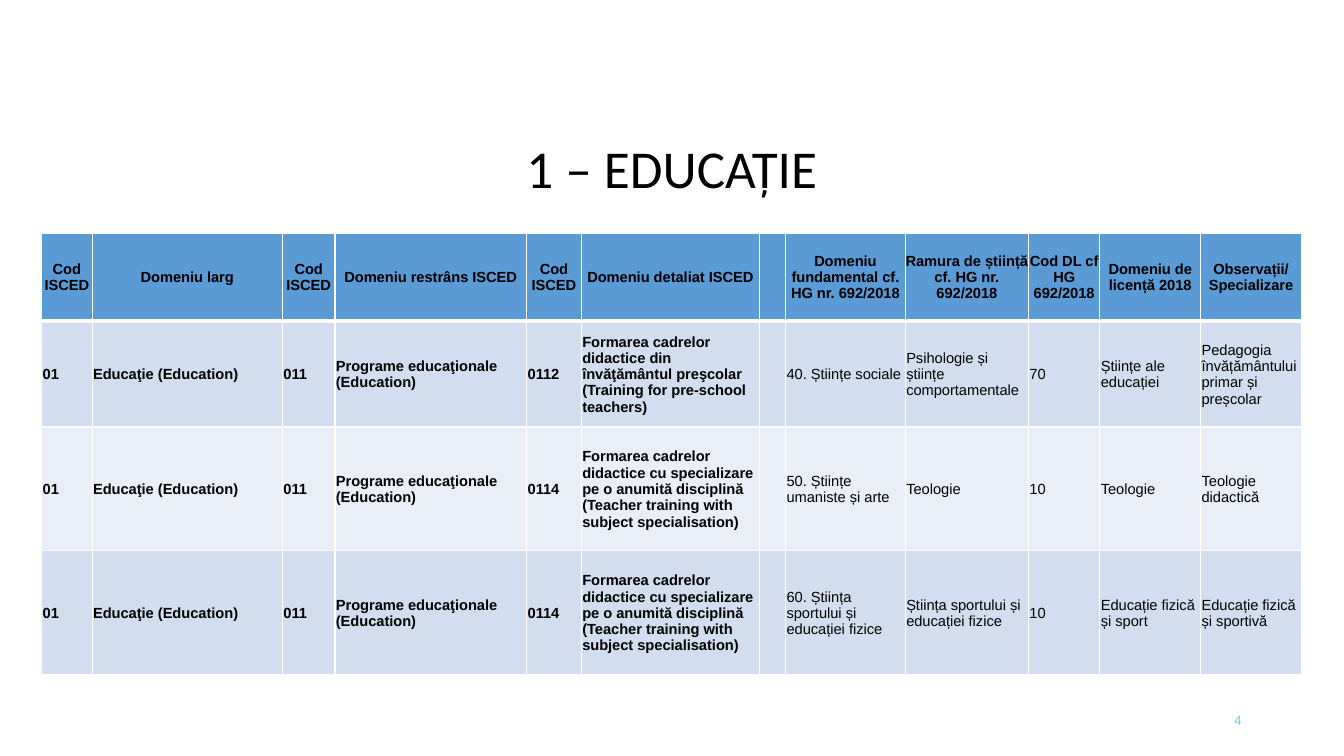
"""Build the slide that maps ISCED education fields to Romanian degree domains."""
from dataclasses import dataclass

from lxml.etree import SubElement
from pptx import Presentation
from pptx.dml.color import RGBColor
from pptx.enum.text import MSO_ANCHOR, PP_ALIGN
from pptx.oxml.ns import qn
from pptx.slide import Slide
from pptx.table import _Cell
from pptx.text.text import TextFrame
from pptx.util import Pt

COLOURS = {
    "text": "000000",
    "border": "FFFFFF",
    "header": "5B9BD5",
    "odd": "D2DEEF",
    "even": "EAEFF7",
    "number": "5FCBEF",
}
COLUMN_WIDTHS = [36, 136, 37.5, 137, 39, 127.5, 18.5, 85.5, 88, 51, 72, 72]
ROW_HEIGHTS = [62.5, 75.5, 88.5, 88.5]
HEADINGS = [
    "Cod ISCED", "Domeniu larg", "Cod ISCED", "Domeniu restrâns ISCED",
    "Cod ISCED", "Domeniu detaliat ISCED", "",
    "Domeniu fundamental cf. HG nr. 692/2018",
    "Ramura de știință cf. HG nr. 692/2018", "Cod DL cf HG 692/2018",
    "Domeniu de licență 2018", "Observații/ Specializare",
]
BROAD_FIELD = ["01", "Educaţie (Education)", "011", "Programe educaţionale (Education)"]
SUBJECT_TRAINING = (
    "Formarea cadrelor didactice cu specializare pe o anumită disciplină "
    "(Teacher training with subject specialisation)"
)
BOLD_COLUMNS = 6


@dataclass
class Programme:
    """One detailed ISCED field and its national classification."""

    isced_code: str
    detailed_field: str
    fundamental_domain: str
    science_branch: str
    degree_code: str
    degree_domain: str
    specialisation: str

    def entries(self) -> list[str]:
        """Return the texts of the table row, with the blank divider column."""
        return BROAD_FIELD + [
            self.isced_code, self.detailed_field, "", self.fundamental_domain,
            self.science_branch, self.degree_code, self.degree_domain,
            self.specialisation,
        ]


PROGRAMMES = [
    Programme(
        "0112",
        "Formarea cadrelor didactice din învăţământul preşcolar "
        "(Training for pre-school teachers)",
        "40. Științe sociale", "Psihologie și științe comportamentale", "70",
        "Științe ale educației", "Pedagogia învățământului primar și preșcolar",
    ),
    Programme(
        "0114", SUBJECT_TRAINING, "50. Științe umaniste și arte", "Teologie",
        "10", "Teologie", "Teologie didactică",
    ),
    Programme(
        "0114", SUBJECT_TRAINING, "60. Știința sportului și educației fizice",
        "Știința sportului și educației fizice", "10",
        "Educație fizică și sport", "Educație fizică și sportivă",
    ),
]


def write_text(
    frame: TextFrame, text: str, *, size: float, font: str = "Arial",
    colour: str = "text", bold: bool = False,
    align: PP_ALIGN = PP_ALIGN.LEFT, spacing: float = 1.0,
) -> None:
    """Write one formatted paragraph, centred vertically, into a text frame."""
    frame.word_wrap = True
    frame.vertical_anchor = MSO_ANCHOR.MIDDLE
    paragraph = frame.paragraphs[0]
    paragraph.alignment = align
    paragraph.line_spacing = spacing
    run = paragraph.add_run()
    run.text = text
    run.font.size = Pt(size)
    run.font.name = font
    run.font.bold = bold
    run.font.color.rgb = RGBColor.from_string(COLOURS[colour])


def style_cell(cell: _Cell, fill: str, margin: float, top: float, bottom: float) -> None:
    """Set the margins, borders and fill of a table cell."""
    cell.margin_left = cell.margin_right = cell.margin_top = Pt(margin)
    cell.margin_bottom = Pt(0)
    cell.vertical_anchor = MSO_ANCHOR.MIDDLE
    properties = cell._tc.get_or_add_tcPr()
    for side, width in (("L", 1), ("R", 1), ("T", top), ("B", bottom)):
        border = SubElement(properties, qn(f"a:ln{side}"), w=str(Pt(width)))
        border_fill = SubElement(border, qn("a:solidFill"))
        SubElement(border_fill, qn("a:srgbClr"), val=COLOURS["border"])
    cell.fill.solid()
    cell.fill.fore_color.rgb = RGBColor.from_string(COLOURS[fill])


def add_classification(slide: Slide) -> None:
    """Add the table of ISCED fields and degree domains."""
    entries = [HEADINGS] + [programme.entries() for programme in PROGRAMMES]
    classification = slide.shapes.add_table(
        len(entries), len(HEADINGS), Pt(29.8), Pt(167),
        Pt(sum(COLUMN_WIDTHS)), Pt(sum(ROW_HEIGHTS)),
    ).table
    classification.horz_banding = False
    for column, width in zip(classification.columns, COLUMN_WIDTHS):
        column.width = Pt(width)
    for row, height in zip(classification.rows, ROW_HEIGHTS):
        row.height = Pt(height)
    for row_index, row_entries in enumerate(entries):
        is_header = row_index == 0
        fill = "header" if is_header else ("odd" if row_index % 2 else "even")
        for column_index, entry in enumerate(row_entries):
            cell = classification.cell(row_index, column_index)
            style_cell(
                cell, fill, margin=0 if is_header else 0.7,
                top=3 if row_index == 1 else 1, bottom=3 if is_header else 1,
            )
            if entry:
                write_text(
                    cell.text_frame, entry, size=10.5,
                    bold=is_header or column_index < BOLD_COLUMNS,
                    align=PP_ALIGN.CENTER if is_header else PP_ALIGN.LEFT,
                )


def main() -> None:
    """Create the presentation and save it."""
    presentation = Presentation()
    presentation.slide_width, presentation.slide_height = Pt(960), Pt(540)
    slide = presentation.slides.add_slide(presentation.slide_layouts[5])

    add_classification(slide)

    page_number = slide.shapes.add_textbox(Pt(678), Pt(500.5), Pt(216), Pt(28.8))
    write_text(
        page_number.text_frame, "4", size=9, font="Lato", colour="number",
        align=PP_ALIGN.RIGHT,
    )

    title = slide.shapes.title
    title.left, title.top, title.width, title.height = Pt(66), Pt(96.5), Pt(828), Pt(52)
    write_text(
        title.text_frame, "1 – EDUCAȚIE", size=38, font="Calibri",
        align=PP_ALIGN.CENTER, spacing=0.9,
    )

    presentation.save("out.pptx")


if __name__ == "__main__":
    main()
